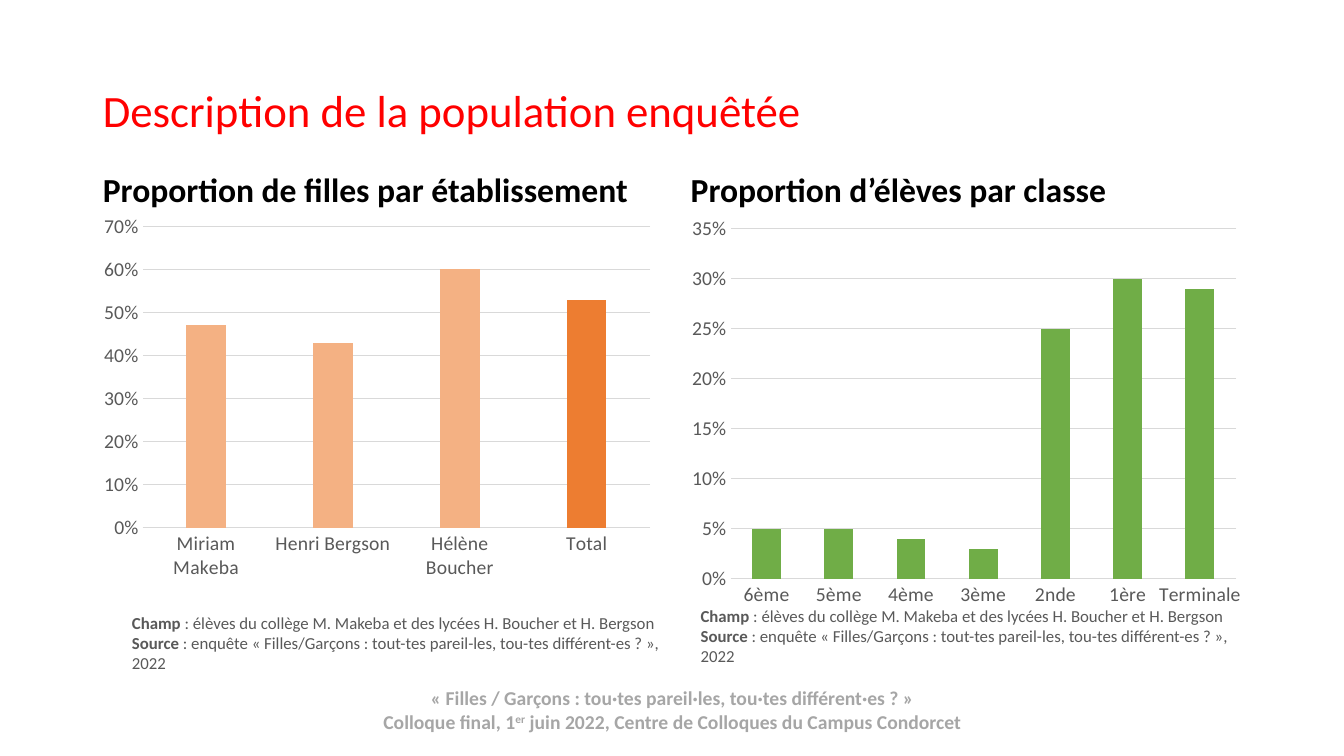
from pptx import Presentation
from pptx.chart.data import CategoryChartData
from pptx.dml.color import RGBColor
from pptx.enum.chart import XL_CHART_TYPE, XL_TICK_MARK
from pptx.enum.text import MSO_ANCHOR, MSO_AUTO_SIZE, PP_ALIGN
from pptx.util import Inches, Pt

RED = RGBColor(0xFF, 0x00, 0x00)
BLACK = RGBColor(0x00, 0x00, 0x00)
GREY = RGBColor(0x59, 0x59, 0x59)
SILVER = RGBColor(0xA6, 0xA6, 0xA6)
PALE = RGBColor(0xD9, 0xD9, 0xD9)
PEACH = RGBColor(0xF4, 0xB1, 0x83)
ORANGE = RGBColor(0xED, 0x7D, 0x31)
GREEN = RGBColor(0x70, 0xAD, 0x47)

NOTE = [
    [("Champ", "b"),
     (" : élèves du collège M. Makeba et des lycées H. Boucher et H. Bergson", "")],
    [("Source ", "b"),
     (": enquête « Filles/Garçons : tout-tes pareil-les, tou-tes différent-es ? », 2022", "")],
]
FOOT = [
    [("« Filles / Garçons : tou·tes pareil·les, tou·tes différent·es ? »", "b")],
    [("Colloque final, 1", "b"), ("er", "b^"),
     (" juin 2022, Centre de Colloques du Campus Condorcet", "b")],
]


class Page:
    """Style and current slide."""
    face = "Calibri"

    def __init__(self, deck):
        self.slide = deck.slides.add_slide(deck.slide_layouts[4])
        self.spots = {s.placeholder_format.idx: s for s in self.slide.placeholders}

    def style(self, font, size, color, bold=None):
        font.name, font.size, font.bold = self.face, Pt(size), bold
        font.color.rgb = color

    def head(self, idx, text, box, size, color, bold, anchor, lead=0.9):
        """Fill and move a title or heading placeholder."""
        spot = self.spots.pop(idx)
        spot.left, spot.top, spot.width, spot.height = map(Inches, box)
        frame = spot.text_frame
        frame.text = text
        frame.word_wrap = True
        frame.auto_size = MSO_AUTO_SIZE.NONE
        frame.vertical_anchor = anchor
        para = frame.paragraphs[0]
        para.alignment = PP_ALIGN.LEFT
        para.line_spacing = lead
        para.space_before = Pt(0)
        self.style(para.font, size, color, bold)

    def text(self, lines, box, size, color, align=PP_ALIGN.LEFT):
        """Text box; run marks: b for bold, ^ for superscript."""
        frame = self.slide.shapes.add_textbox(*map(Inches, box)).text_frame
        frame.word_wrap = True
        for i, line in enumerate(lines):
            para = frame.add_paragraph() if i else frame.paragraphs[0]
            para.alignment = align
            self.style(para.font, size, color)
            for words, marks in line:
                run = para.add_run()
                run.text = words
                run.font.bold = "b" in marks
                if "^" in marks:
                    run._r.get_or_add_rPr().set("baseline", "30000")

    def chart(self, kind, cats, vals, box, color, gap, lap, top, step):
        """Column chart in percent; returns its series."""
        data = CategoryChartData(number_format="0%")
        data.categories = cats
        data.add_series("Series 1", vals)
        chart = self.slide.shapes.add_chart(kind, *map(Inches, box), data).chart
        chart.has_title = chart.has_legend = False
        self.style(chart.font, 10, BLACK)
        plot = chart.plots[0]
        plot.vary_by_categories = False
        plot.gap_width, plot.overlap = gap, lap
        for axis in (chart.category_axis, chart.value_axis):
            axis.major_tick_mark = axis.minor_tick_mark = XL_TICK_MARK.NONE
            self.style(axis.tick_labels.font, 14, GREY)
        grid = chart.value_axis.major_gridlines.format.line
        for line in (chart.category_axis.format.line, grid):
            line.color.rgb = PALE
            line.width = Pt(0.75)
        axis = chart.value_axis
        axis.format.line.fill.background()
        axis.minimum_scale, axis.maximum_scale, axis.major_unit = 0, top, step
        axis.tick_labels.number_format = "0%"
        axis.tick_labels.number_format_is_linked = False
        bars = plot.series[0]
        bars.format.fill.solid()
        bars.format.fill.fore_color.rgb = color
        return bars

    def clean(self):
        """Remove the placeholders left empty."""
        for spot in self.spots.values():
            spot.element.getparent().remove(spot.element)


def main():
    deck = Presentation()
    deck.slide_width, deck.slide_height = Inches(13.33), Inches(7.5)
    page = Page(deck)

    # Footer and headings
    page.text(FOOT, (0.92, 6.76, 11.5, 0.57), 14, SILVER, PP_ALIGN.CENTER)
    page.head(0, "Description de la population enquêtée",
              (0.92, 0.4, 11.5, 1.45), 32, RED, False, MSO_ANCHOR.MIDDLE)
    page.head(1, "Proportion de filles par établissement",
              (0.92, 1.47, 5.64, 0.66), 24, BLACK, True, MSO_ANCHOR.BOTTOM)
    page.head(3, "Proportion d’élèves par classe",
              (6.75, 1.68, 5.67, 0.44), 24, BLACK, True, MSO_ANCHOR.BOTTOM, 0.8)

    # Girls by school, with the total set apart
    bars = page.chart(XL_CHART_TYPE.COLUMN_CLUSTERED,
                      ["Miriam Makeba", "Henri Bergson", "Hélène Boucher", "Total"],
                      [0.47, 0.43, 0.6, 0.53],
                      (0.92, 2.05, 5.64, 3.78), PEACH, 219, -27, 0.7, 0.1)
    total = bars.points[3].format.fill
    total.solid()
    total.fore_color.rgb = ORANGE

    # Pupils by class
    page.chart(XL_CHART_TYPE.COLUMN_STACKED,
               ["6ème", "5ème", "4ème", "3ème", "2nde", "1ère", "Terminale"],
               [0.05, 0.05, 0.04, 0.03, 0.25, 0.3, 0.29],
               (6.75, 2.07, 5.67, 4.03), GREEN, 150, 100, 0.35, 0.05)

    # Notes under the charts
    for left, top in ((1.21, 6.03), (6.85, 5.96)):
        page.text(NOTE, (left, top, 5.61, 0.71), 12, GREY)

    page.clean()
    deck.save("out.pptx")


if __name__ == "__main__":
    main()
